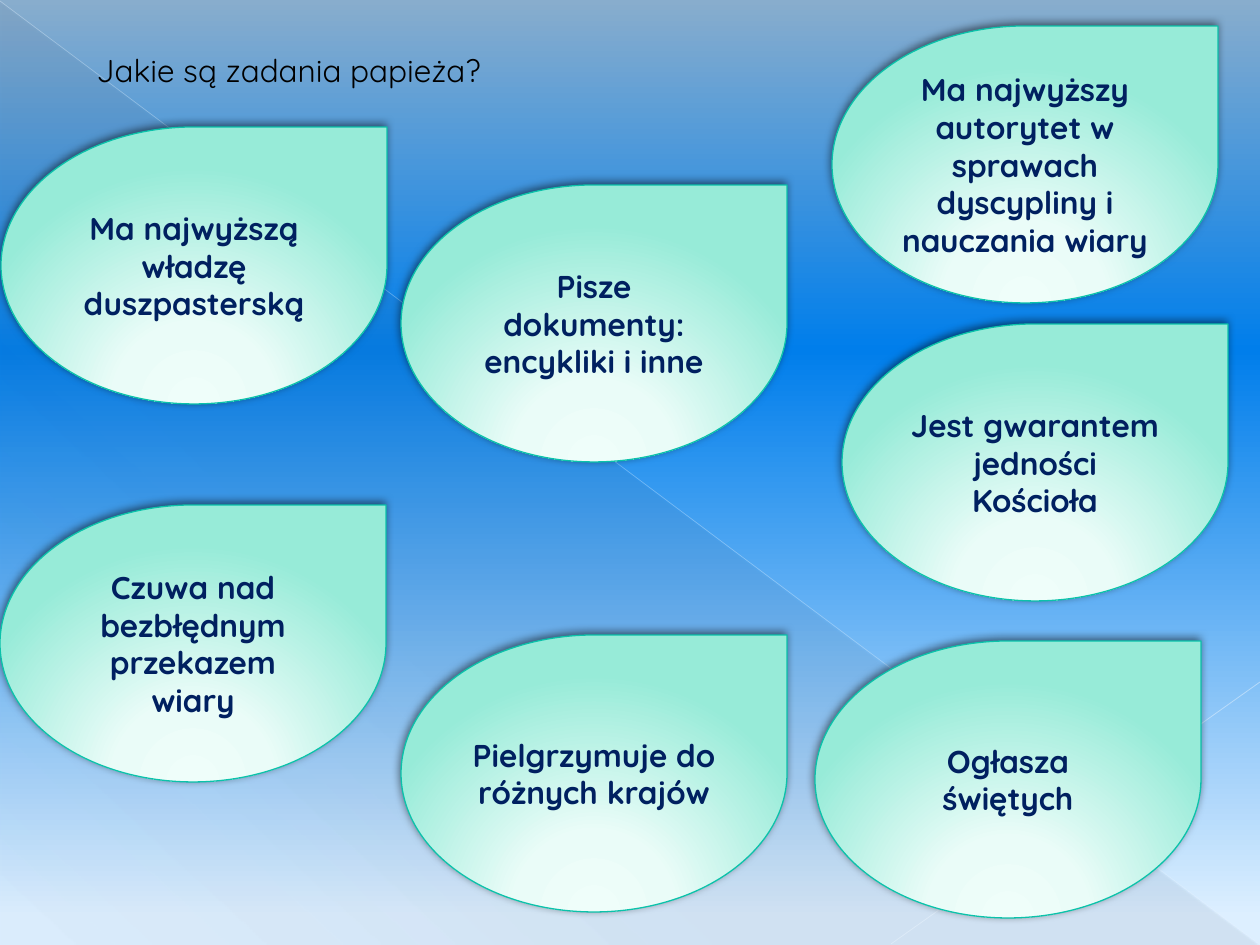
from lxml import etree
from pptx import Presentation, util as u
from pptx.dml.color import RGBColor
from pptx.enum import shapes, text
from pptx.oxml import ns, parse_xml

SCALE = u.Inches(1) / 126
FONT = "Quicksand"
BLACK = RGBColor(0, 0, 0)
NAVY = RGBColor(0x00, 0x20, 0x60)
TEAL = RGBColor(0x0B, 0xC2, 0xAA)
SLATE = RGBColor(0x4E, 0x5B, 0x6F)
PALE_BLUE = RGBColor(0xEA, 0xF5, 0xFF)
ICE_BLUE = RGBColor(0xEC, 0xF6, 0xFF)
SKY_STOPS = [
    (0, RGBColor(0x88, 0xAD, 0xCD), 100),
    (37, RGBColor(0x00, 0x7E, 0xEB), 100),
    (97, RGBColor(0xDD, 0xEF, 0xFF), 100),
]
CORNER_STOPS = [(0, SLATE, 10), (70, SLATE, 8), (100, SLATE, 1)]
MINT_STOPS = [
    (0, RGBColor(0xEF, 0xFE, 0xFA), 100),
    (34, RGBColor(0xEA, 0xFC, 0xF8), 100),
    (100, RGBColor(0x97, 0xEB, 0xD8), 100),
]
MINT_GLOW = (
    '<a:path path="circle">'
    '<a:fillToRect l="50000" t="155000" r="50000" b="-55000"/></a:path>'
)
DROP_SIZE = (386, 277)
TASKS = [
    (1, 127, "Ma najwyższą władzę duszpasterską"),
    (0, 505, "Czuwa nad bezbłędnym przekazem wiary"),
    (842, 324, "Jest gwarantem jedności Kościoła"),
    (832, 26, "Ma najwyższy autorytet w sprawach dyscypliny i nauczania wiary"),
    (815, 641, "Ogłasza świętych"),
    (401, 635, "Pielgrzymuje do różnych krajów"),
    (401, 185, "Pisze dokumenty: encykliki i inne"),
]


def px(*lengths):
    return [round(length * SCALE) for length in lengths]


def linear(degrees):
    return f'<a:lin ang="{degrees * 60000}" scaled="0"/>'


def set_gradient(fill, parent, stops, direction):
    fill.solid()
    stop_xml = "".join(
        f'<a:gs pos="{position * 1000}"><a:srgbClr val="{color}">'
        f'<a:alpha val="{opacity * 1000}"/></a:srgbClr></a:gs>'
        for position, color, opacity in stops
    )
    gradient = parse_xml(
        f'<a:gradFill {ns.nsdecls("a")} rotWithShape="1">'
        f"<a:gsLst>{stop_xml}</a:gsLst>{direction}</a:gradFill>"
    )
    parent.replace(parent.find(ns.qn("a:solidFill")), gradient)


def set_font(paragraph, color, bold):
    font = paragraph.font
    font.name, font.size, font.bold = FONT, u.Pt(18), bold
    font.color.rgb = color


def add_corner(slide):
    corner = slide.shapes.add_shape(
        shapes.MSO_SHAPE.RIGHT_TRIANGLE, *px(1, 3, 1257, 942)
    )
    corner.shadow.inherit = False
    set_gradient(corner.fill, corner.element.spPr, CORNER_STOPS, linear(133))
    corner.line.fill.background()


def add_ray(slide, ends, color, width, opacity):
    ray = slide.shapes.add_connector(shapes.MSO_CONNECTOR.STRAIGHT, *px(*ends))
    ray.line.color.rgb = color
    ray.line.width = u.Pt(width)
    properties = ray.element.spPr
    color_element = next(properties.iter(ns.qn("a:srgbClr")))
    alpha = etree.SubElement(color_element, ns.qn("a:alpha"))
    alpha.set("val", str(opacity * 1000))
    etree.SubElement(properties, ns.qn("a:effectLst"))


def add_title(slide, words):
    title = slide.shapes.title
    title.left, title.top, title.width, title.height = px(84, 45, 438, 50)
    frame = title.text_frame
    frame.text = words
    frame.word_wrap = False
    frame.auto_size = text.MSO_AUTO_SIZE.SHAPE_TO_FIT_TEXT
    frame.vertical_anchor = text.MSO_ANCHOR.TOP
    paragraph = frame.paragraphs[0]
    paragraph.alignment = text.PP_ALIGN.LEFT
    set_font(paragraph, BLACK, False)
    slide.shapes.element.append(title.element)


def add_shadow(shape):
    shape.shadow.inherit = False
    effects = shape.element.spPr.find(ns.qn("a:effectLst"))
    effects.append(parse_xml(
        f'<a:outerShdw {ns.nsdecls("a")} blurRad="{u.Pt(5)}" dist="{u.Pt(2)}" '
        f'dir="{245 * 60000}" rotWithShape="0"><a:srgbClr val="{BLACK}">'
        '<a:alpha val="50000"/></a:srgbClr></a:outerShdw>'
    ))


def add_drop(slide, left, top, words):
    drop = slide.shapes.add_shape(
        shapes.MSO_SHAPE.TEAR, *px(left, top, *DROP_SIZE)
    )
    set_gradient(drop.fill, drop.element.spPr, MINT_STOPS, MINT_GLOW)
    drop.line.color.rgb = TEAL
    drop.line.width = u.Pt(0.75)
    add_shadow(drop)
    frame = drop.text_frame
    frame.text = words
    frame.word_wrap = True
    frame.vertical_anchor = text.MSO_ANCHOR.MIDDLE
    paragraph = frame.paragraphs[0]
    paragraph.alignment = text.PP_ALIGN.CENTER
    set_font(paragraph, NAVY, True)


def main():
    """Build the slide on the tasks of the pope."""
    presentation = Presentation()
    presentation.slide_width, presentation.slide_height = px(1260, 945)
    slide = presentation.slides.add_slide(presentation.slide_layouts[5])
    background = slide.background.fill
    background.solid()
    properties = next(slide.element.iter(ns.qn("p:bgPr")))
    set_gradient(background, properties, SKY_STOPS, linear(90))
    add_corner(slide)
    add_ray(slide, (0, 1, 1259, 944), PALE_BLUE, 0.39, 35)
    add_ray(slide, (1260, 682, 891, 944), ICE_BLUE, 0.47, 45)
    add_title(slide, "Jakie są zadania papieża?")
    for left, top, words in TASKS:
        add_drop(slide, left, top, words)
    presentation.save("out.pptx")


if __name__ == "__main__":
    main()
